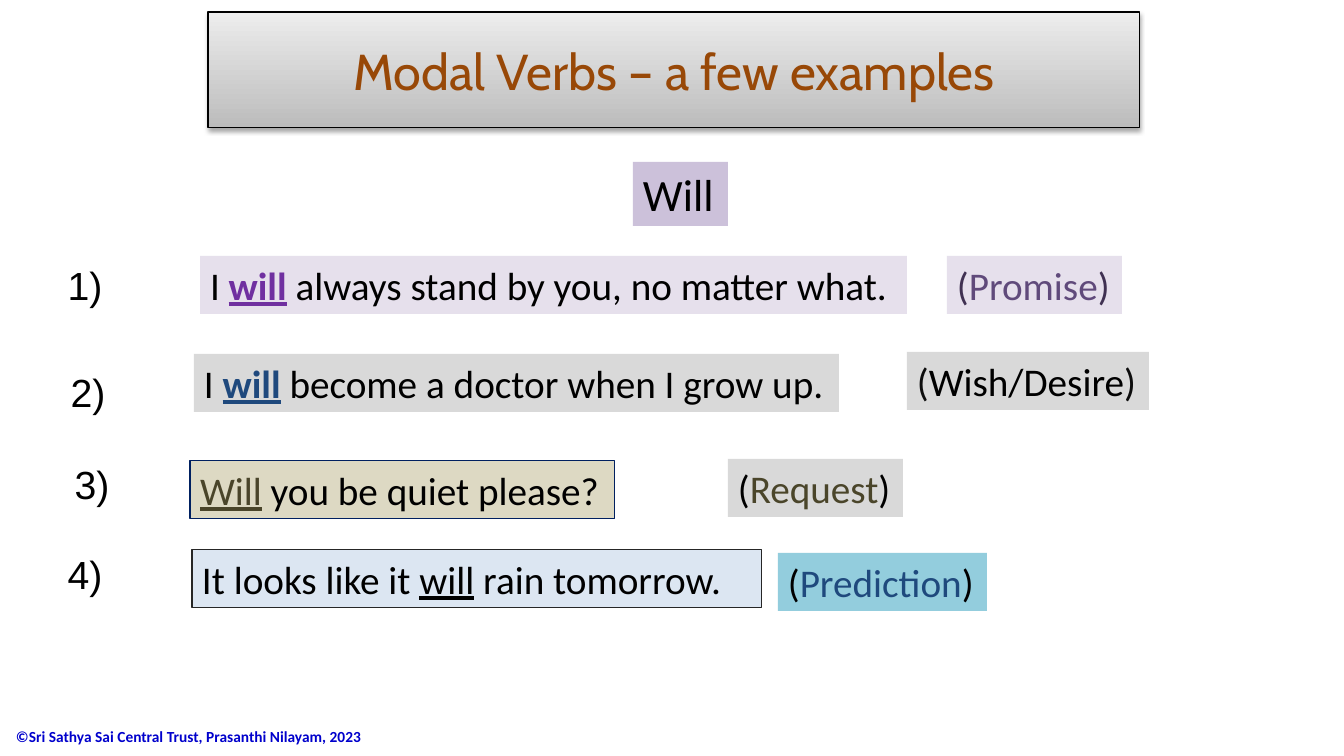
from lxml import etree
from pptx import Presentation
from pptx.dml.color import RGBColor
from pptx.enum.text import MSO_ANCHOR, MSO_AUTO_SIZE, PP_ALIGN
from pptx.oxml.ns import qn
from pptx.util import Emu, Pt

LEFT, CENTER = PP_ALIGN.LEFT, PP_ALIGN.CENTER
TOP, MIDDLE = MSO_ANCHOR.TOP, MSO_ANCHOR.MIDDLE
FIXED = MSO_AUTO_SIZE.NONE
EMU_PER_PX = 914400 / 100.8
TITLE_ONLY = 5
BLACK = "000000"


def px(length):
    return Emu(round(length * EMU_PER_PX))


def color(hex_string):
    return RGBColor.from_string(hex_string)


def add_text(paragraph, text, font="Calibri", size=28, ink=BLACK, bold=False, underline=False):
    run = paragraph.add_run()
    run.text = text
    run.font.name = font
    run.font.size = Pt(size)
    run.font.color.rgb = color(ink)
    run.font.bold = bold
    run.font.underline = underline


class LessonSlide:
    """Builds the elements of a grammar lesson slide in one style."""

    def __init__(self, presentation):
        self.slide = presentation.slides.add_slide(presentation.slide_layouts[TITLE_ONLY])

    def prepare(self, shape, align, anchor):
        frame = shape.text_frame
        frame.word_wrap = True
        frame.auto_size = FIXED
        frame.vertical_anchor = anchor
        frame.margin_left = frame.margin_right = px(10)
        frame.margin_top = frame.margin_bottom = px(5)
        paragraph = frame.paragraphs[0]
        paragraph.alignment = align
        return paragraph

    def title(self, text, left, top, width, height):
        shape = self.slide.shapes.title
        shape.left, shape.top, shape.width, shape.height = map(px, (left, top, width, height))
        shape.fill.gradient()
        shape.fill.gradient_angle = 270
        for stop, shade in zip(shape.fill.gradient_stops, ("EDEDED", "BCBCBC")):
            stop.color.rgb = color(shade)
        shape.line.color.rgb = color(BLACK)
        shape.line.width = Pt(0.75)
        self.drop_shadow(shape)
        add_text(self.prepare(shape, CENTER, MIDDLE), text, font="Cabin", size=36, ink="984807")

    def drop_shadow(self, shape):
        shape.shadow.inherit = False
        effects = shape._element.spPr.find(qn("a:effectLst"))
        shadow = etree.SubElement(effects, qn("a:outerShdw"), blurRad="40000", dist="23000",
                                  dir="5400000", rotWithShape="0")
        shade = etree.SubElement(shadow, qn("a:srgbClr"), val=BLACK)
        etree.SubElement(shade, qn("a:alpha"), val="35000")

    def box(self, runs, left, top, width, height=58, fill=None, line=None, align=LEFT, anchor=TOP):
        shape = self.slide.shapes.add_textbox(*map(px, (left, top, width, height)))
        if fill:
            shape.fill.solid()
            shape.fill.fore_color.rgb = color(fill)
        if line:
            shape.line.color.rgb = color(line)
            shape.line.width = Pt(0.75)
        paragraph = self.prepare(shape, align, anchor)
        for text, style in runs:
            add_text(paragraph, text, **style)

    def number(self, value, left, top):
        self.box([(f"{value})", {"font": "Arial"})], left, top, 56, align=CENTER)

    def sentence(self, before, verb, after, verb_style, **box_style):
        runs = [(before, {}), (verb, {"underline": True, **verb_style}), (after, {})]
        self.box([run for run in runs if run[0]], **box_style)

    def meaning(self, word, ink, bracket_ink, **box_style):
        bracket = {"ink": bracket_ink}
        self.box([("(", bracket), (word, {"ink": ink}), (")", bracket)], **box_style)


def main():
    presentation = Presentation()
    presentation.slide_width, presentation.slide_height = px(1344), px(756)
    lesson = LessonSlide(presentation)

    lesson.title("Modal Verbs – a few examples", 208, 12, 932, 116)
    lesson.box([("Will", {"size": 32})], 633, 162, 95, 64, fill="CCC1DA")

    numbers = [(57, 256), (60, 363), (64, 455), (57, 545)]
    for value, (left, top) in enumerate(numbers, start=1):
        lesson.number(value, left, top)

    lesson.sentence("I ", "will", " always stand by you, no matter what.",
                    {"ink": "7030A0", "bold": True},
                    left=200, top=256, width=707, fill="E6E0EC")
    lesson.sentence("I ", "will", " become a doctor when I grow up.",
                    {"ink": "1F497D", "bold": True},
                    left=194, top=354, width=645, fill="D9D9D9")
    lesson.sentence("", "Will", " you be quiet please?", {"ink": "4A452A"},
                    left=190, top=461, width=425, fill="DDD9C3", line="002060")
    lesson.sentence("It looks like it ", "will", " rain tomorrow.", {},
                    left=192, top=550, width=570, fill="DCE6F2", line="262626")

    lesson.meaning("Promise", "604A7B", "403152", left=947, top=256, width=175, fill="E6E0EC")
    lesson.meaning("Wish/Desire", BLACK, "0D0D0D", left=907, top=352, width=242, fill="D9D9D9")
    lesson.meaning("Request", "4A452A", BLACK, left=728, top=459, width=175, fill="D9D9D9")
    lesson.meaning("Prediction", "1F497D", BLACK, left=778, top=553, width=209, fill="93CDDD")

    copyright_style = {"size": 11, "ink": "0000CC", "bold": True}
    lesson.box([("©Sri Sathya Sai Central Trust, Prasanthi Nilayam, 2023", copyright_style)],
               6, 716, 384, 40, anchor=MIDDLE)
    presentation.save("out.pptx")


if __name__ == "__main__":
    main()
